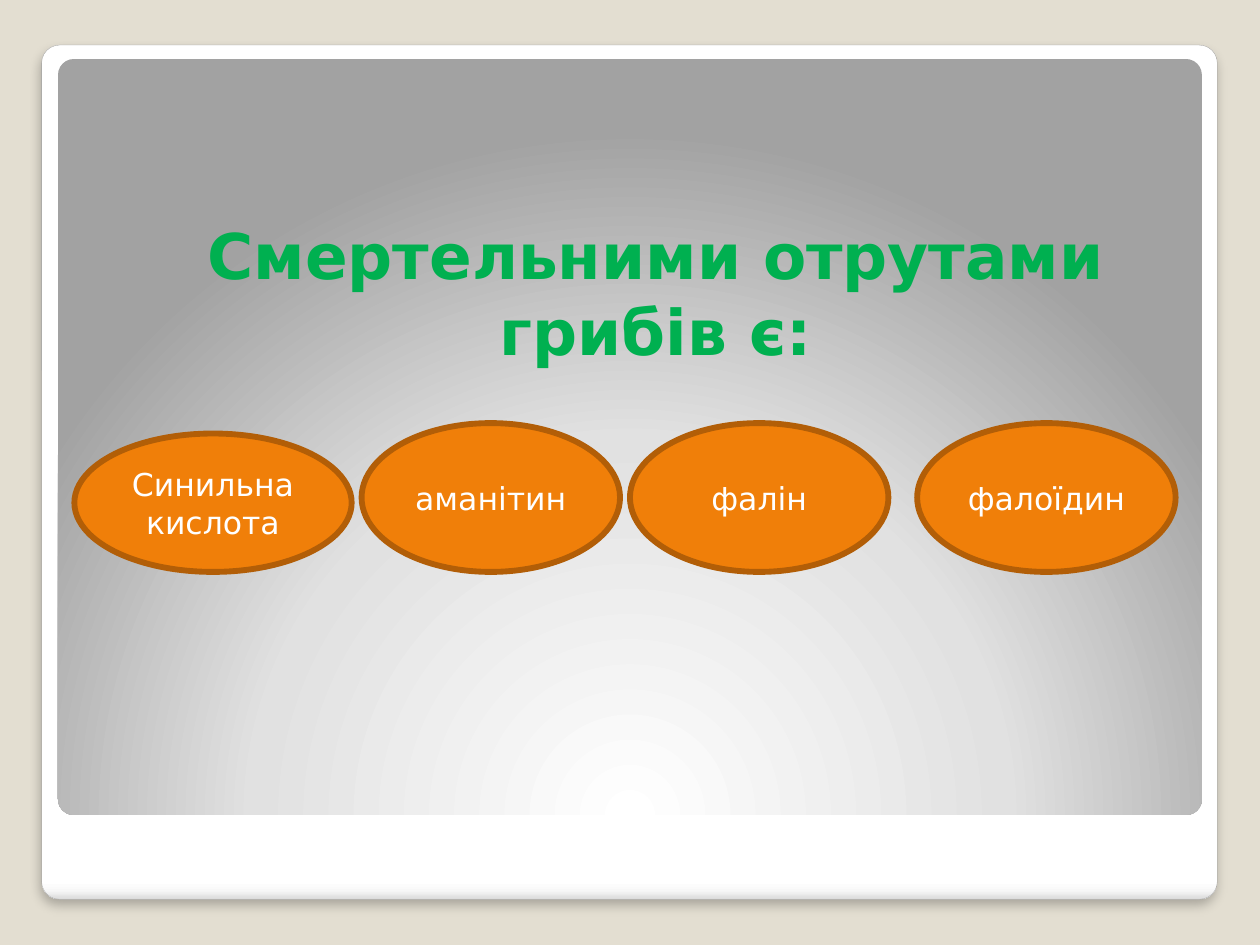
from lxml import etree
from pptx import Presentation
from pptx.dml.color import RGBColor
from pptx.enum.shapes import MSO_SHAPE
from pptx.enum.text import MSO_ANCHOR, MSO_AUTO_SIZE, PP_ALIGN
from pptx.oxml.ns import qn
from pptx.util import Cm, Pt

ROUNDED, OVAL = MSO_SHAPE.ROUNDED_RECTANGLE, MSO_SHAPE.OVAL
CENTER = PP_ALIGN.CENTER
BOTTOM, MIDDLE = MSO_ANCHOR.BOTTOM, MSO_ANCHOR.MIDDLE
FONT = "DejaVu Sans"

TITLE = "Смертельними отрутами грибів є:"
# Text, left, width, height in cm
POISONS = [
    ("Синильна кислота", 1.5, 5.59, 2.79),
    ("аманітин", 7.29, 5.21, 3),
    ("фалін", 12.7, 5.21, 3),
    ("фалоїдин", 18.49, 5.21, 3),
]
POISON_BOTTOM = 11.53

# Position in percent, colour
CARD_STOPS = [(0, "FFFFFF"), (98, "FFFFFF"), (99, "F7F7F7"), (100, "DADADA")]
PANEL_STOPS = [(0, "FFFFFF"), (55, "E1E1E1"), (100, "A2A2A2")]
PANEL_FOCUS = {"l": 50, "t": 175, "r": 50, "b": -75}


def color(value):
    return RGBColor.from_string(value)


def add_element(parent, tag, **attributes):
    element = etree.SubElement(parent, qn(tag))
    for name, value in attributes.items():
        element.set(name, str(value))
    return element


def add_shape(slide, kind, left, top, width, height):
    shape = slide.shapes.add_shape(kind, Cm(left), Cm(top), Cm(width), Cm(height))
    shape.shadow.inherit = False
    return shape


def set_line(shape, line_color, width):
    shape.line.color.rgb = color(line_color)
    shape.line.width = Pt(width)


def set_gradient(shape, stops, focus=None):
    """Fill from top to bottom, or in circles around the focus when given."""
    shape.fill.background()
    properties = shape._element.spPr
    gradient = etree.Element(qn("a:gradFill"), rotWithShape="1")
    stop_list = add_element(gradient, "a:gsLst")
    for position, value in stops:
        stop = add_element(stop_list, "a:gs", pos=position * 1000)
        add_element(stop, "a:srgbClr", val=value)
    if focus:
        circle = add_element(gradient, "a:path", path="circle")
        add_element(circle, "a:fillToRect", **{side: n * 1000 for side, n in focus.items()})
    else:
        add_element(gradient, "a:lin", ang=90 * 60000, scaled=0)
    properties.replace(properties.find(qn("a:noFill")), gradient)


def add_shadow(shape, shadow_color, opacity, blur, distance):
    effects = shape._element.spPr.find(qn("a:effectLst"))
    shadow = add_element(effects, "a:outerShdw", blurRad=Pt(blur), dist=Pt(distance),
                         dir=90 * 60000, algn="t", rotWithShape=0)
    shadow_fill = add_element(shadow, "a:srgbClr", val=shadow_color)
    add_element(shadow_fill, "a:alpha", val=opacity * 1000)


def set_text(shape, text, size, text_color, bold=False, anchor=MIDDLE):
    frame = shape.text_frame
    frame.word_wrap = True
    frame.auto_size = MSO_AUTO_SIZE.NONE
    frame.vertical_anchor = anchor
    paragraph = frame.paragraphs[0]
    paragraph.alignment = CENTER
    run = paragraph.add_run()
    run.text = text
    run.font.name = FONT
    run.font.size = Pt(size)
    run.font.bold = bold
    run.font.color.rgb = color(text_color)


def add_frame(slide):
    card = add_shape(slide, ROUNDED, 0.84, 0.91, 23.7, 17.22)
    set_gradient(card, CARD_STOPS)
    set_line(card, "A4A4A4", 0.16)
    add_shadow(card, "000000", opacity=25, blur=6, distance=4)

    panel = add_shape(slide, ROUNDED, 1.17, 1.19, 23.06, 15.24)
    set_gradient(panel, PANEL_STOPS, PANEL_FOCUS)
    panel.line.fill.background()

    for shape in (card, panel):
        shape.adjustments[0] = 0.021


def add_title(slide):
    title = slide.shapes.title
    title.left, title.top = Cm(2.31), Cm(3.73)
    title.width, title.height = Cm(21.82), Cm(3.81)
    set_text(title, TITLE, size=36, text_color="00B050", bold=True, anchor=BOTTOM)
    # Bring the title in front of the frame
    slide.shapes._spTree.append(title._element)


def add_poisons(slide):
    for text, left, width, height in POISONS:
        oval = add_shape(slide, OVAL, left, POISON_BOTTOM - height, width, height)
        oval.fill.solid()
        oval.fill.fore_color.rgb = color("F07F09")
        set_line(oval, "B25E07", 3.35)
        set_text(oval, text, size=18, text_color="FFFFFF")


def main():
    presentation = Presentation()
    presentation.slide_width, presentation.slide_height = Cm(25.4), Cm(19.05)
    slide = presentation.slides.add_slide(presentation.slide_layouts[5])
    slide.background.fill.solid()
    slide.background.fill.fore_color.rgb = color("E3DED1")
    add_frame(slide)
    add_title(slide)
    add_poisons(slide)
    presentation.save("out.pptx")


if __name__ == "__main__":
    main()
